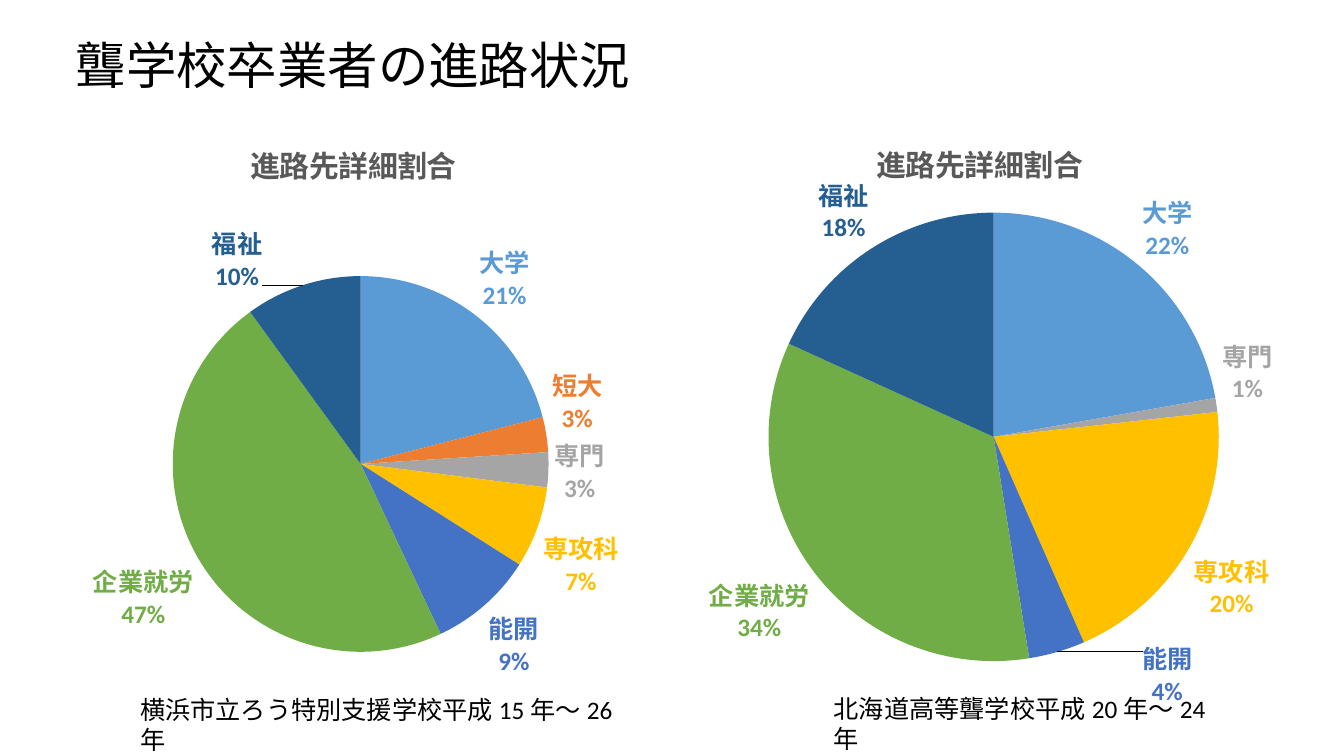
from lxml.etree import SubElement
from pptx import Presentation
from pptx.chart.data import CategoryChartData
from pptx.dml.color import RGBColor
from pptx.enum.chart import XL_CHART_TYPE, XL_LABEL_POSITION
from pptx.enum.text import MSO_ANCHOR, PP_ALIGN
from pptx.oxml import parse_xml
from pptx.oxml.ns import nsdecls, qn
from pptx.util import Inches, Pt

FONT = "Calibri"
BLACK = RGBColor(0x00, 0x00, 0x00)
GREY = RGBColor(0x59, 0x59, 0x59)
CATEGORY_COLOURS = {
    "大学": RGBColor(0x5B, 0x9B, 0xD5),
    "短大": RGBColor(0xED, 0x7D, 0x31),
    "専門": RGBColor(0xA5, 0xA5, 0xA5),
    "専攻科": RGBColor(0xFF, 0xC0, 0x00),
    "能開": RGBColor(0x44, 0x72, 0xC4),
    "企業就労": RGBColor(0x70, 0xAD, 0x47),
    "福祉": RGBColor(0x25, 0x5E, 0x91),
}
CHART_TITLE = "進路先詳細割合"

PANELS = [
    {
        "chart_box": (-0.31, 1.17, 7.63, 5.88),
        "plot": (0.265, 0.267, 0.489, 0.634),
        "values": (21, 3, 3, 7, 9, 47, 10),
        "moved": {"福祉": (-0.05, 0.02)},
        "caption": "横浜市立ろう特別支援学校平成15年～26年",
        "caption_box": (1.29, 6.84, 5.18, 0.4),
    },
    {
        "chart_box": (5.58, 1.16, 8.27, 6.03),
        "plot": (0.247, 0.158, 0.54, 0.741),
        "values": (22, None, 1, 20, 4, 34, 18),
        "moved": {"能開": (0.1, -0.03)},
        "caption": "北海道高等聾学校平成20年～24年",
        "caption_box": (8.17, 6.83, 3.98, 0.4),
    },
]


def set_font(font, size, colour, bold=False):
    for name, value in {"name": FONT, "size": Pt(size), "bold": bold}.items():
        setattr(font, name, value)
    font.color.rgb = colour


def manual_layout(**settings):
    layout = parse_xml(f"<c:layout {nsdecls('c')}/>")
    manual = SubElement(layout, qn("c:manualLayout"))
    for tag, value in settings.items():
        SubElement(manual, qn(f"c:{tag}")).set("val", str(value))
    return layout


def place_plot(chart, share):
    area = chart.plots[0]._element.getparent()
    for old in area.findall(qn("c:layout")):
        area.remove(old)
    x, y, w, h = share
    area.insert(0, manual_layout(layoutTarget="inner", xMode="edge",
                                 yMode="edge", x=x, y=y, w=w, h=h))


def label_point(series, index, colour, offset):
    label = series.points[index].data_label
    set_font(label.font, 18, colour, True)
    label.position = XL_LABEL_POSITION.OUTSIDE_END
    element = next(d for d in series._element.iter(qn("c:dLbl"))
                   if d.find(qn("c:idx")).get("val") == str(index))
    for tag, shown in {"showVal": 0, "showCatName": 1, "showPercent": 1}.items():
        element.find(qn(f"c:{tag}")).set("val", str(shown))
    number = parse_xml(f'<c:numFmt {nsdecls("c")} formatCode="0%" sourceLinked="0"/>')
    element.find(qn("c:txPr")).addprevious(number)
    if offset:
        number.addprevious(manual_layout(x=offset[0], y=offset[1]))
    SubElement(element, qn("c:separator")).text = "\n"


def add_pie(slide, box, plot, values, moved):
    data = CategoryChartData()
    data.categories = list(CATEGORY_COLOURS)
    data.add_series(CHART_TITLE, values)
    chart = slide.shapes.add_chart(XL_CHART_TYPE.PIE, *map(Inches, box), data).chart
    chart.has_legend = False
    chart.has_title = True
    set_font(chart.font, 10, BLACK)
    p = chart.chart_title.text_frame.paragraphs[0]
    r = p.add_run()
    r.text = CHART_TITLE
    set_font(r.font, 21.3, GREY, True)
    place_plot(chart, plot)

    chart.plots[0].vary_by_categories = True
    series = chart.plots[0].series[0]
    series.data_labels.show_value = False
    for i, (category, colour) in enumerate(CATEGORY_COLOURS.items()):
        fill = series.points[i].format.fill
        fill.solid()
        fill.fore_color.rgb = colour
        if values[i] is not None:
            label_point(series, i, colour, moved.get(category))


def add_caption(slide, box, text):
    tf = slide.shapes.add_textbox(*map(Inches, box)).text_frame
    tf.word_wrap = True
    r = tf.paragraphs[0].add_run()
    r.text = text
    set_font(r.font, 18, BLACK)


def add_title(slide, box, text):
    title = slide.shapes.title
    for name, value in zip(("left", "top", "width", "height"), box):
        setattr(title, name, Inches(value))
    tf = title.text_frame
    tf.vertical_anchor = MSO_ANCHOR.MIDDLE
    p = tf.paragraphs[0]
    p.alignment = PP_ALIGN.LEFT
    p.line_spacing = 0.9
    r = p.add_run()
    r.text = text
    set_font(r.font, 36, BLACK)


def main():
    prs = Presentation()
    prs.slide_width, prs.slide_height = Inches(13.33), Inches(7.5)
    slide = prs.slides.add_slide(prs.slide_layouts[5])
    add_title(slide, (0.65, 0.3, 11.5, 0.76), "聾学校卒業者の進路状況")
    for panel in PANELS:
        add_pie(slide, panel["chart_box"], panel["plot"], panel["values"], panel["moved"])
        add_caption(slide, panel["caption_box"], panel["caption"])
    prs.save("out.pptx")


if __name__ == "__main__":
    main()
